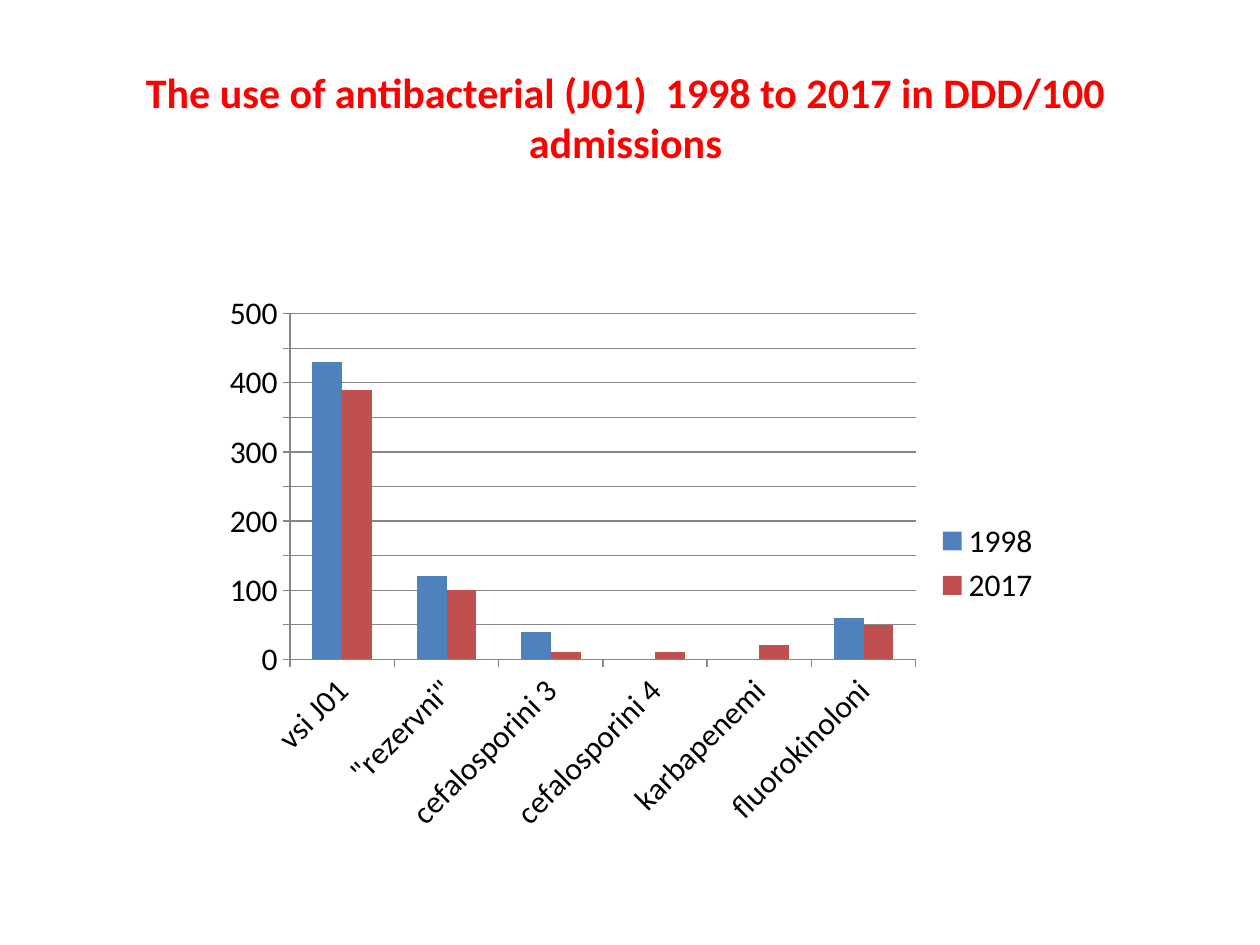
import pptx
import pptx.chart.data
import pptx.dml.color
import pptx.enum.chart
import pptx.enum.text
import pptx.util

Inches = pptx.util.Inches
Pt = pptx.util.Pt
RGBColor = pptx.dml.color.RGBColor

FONT = "Calibri"
RED = RGBColor(0xFF, 0x00, 0x00)
BLACK = RGBColor(0x00, 0x00, 0x00)
GRAY = RGBColor(0x86, 0x86, 0x86)
BLUE = RGBColor(0x4F, 0x81, 0xBD)
BRICK = RGBColor(0xC0, 0x50, 0x4D)

CATEGORIES = ["vsi J01", '"rezervni"', "cefalosporini 3", "cefalosporini 4",
              "karbapenemi", "fluorokinoloni"]
SERIES = [
    ("1998", BLUE, (430, 120, 40, 0, 0, 60)),
    ("2017", BRICK, (390, 100, 10, 10, 20, 50)),
]


def set_font(font, size, color, bold=False):
    """Apply the slide's typeface with a size, colour and weight."""
    font.name = FONT
    font.size = Pt(size)
    font.color.rgb = color
    font.bold = bold


def add_title(s, text):
    """Add the centred red heading."""
    sp = s.shapes.add_textbox(Inches(0.28), Inches(0.3), Inches(9.37), Inches(1.25))
    tf = sp.text_frame
    tf.word_wrap = True
    tf.vertical_anchor = pptx.enum.text.MSO_ANCHOR.MIDDLE
    p = tf.paragraphs[0]
    p.alignment = pptx.enum.text.PP_ALIGN.CENTER
    r = p.add_run()
    r.text = text
    set_font(r.font, 24, RED, bold=True)


def style_line(line):
    """Draw a thin gray chart line."""
    line.color.rgb = GRAY
    line.width = Pt(0.75)


def style_axes(chart):
    """Set outward ticks, the value scale and its gridlines."""
    for axis in (chart.category_axis, chart.value_axis):
        axis.major_tick_mark = pptx.enum.chart.XL_TICK_MARK.OUTSIDE
        axis.minor_tick_mark = pptx.enum.chart.XL_TICK_MARK.NONE
        style_line(axis.format.line)
    values = chart.value_axis
    values.minimum_scale = 0
    values.maximum_scale = 500
    values.major_unit = 50
    values.has_major_gridlines = True
    style_line(values.major_gridlines.format.line)


def add_usage_chart(s):
    """Add the clustered columns comparing both years."""
    data = pptx.chart.data.CategoryChartData()
    data.categories = CATEGORIES
    for name, _, values in SERIES:
        data.add_series(name, values)
    chart = s.shapes.add_chart(
        pptx.enum.chart.XL_CHART_TYPE.COLUMN_CLUSTERED,
        Inches(1.69), Inches(2.25), Inches(6.67), Inches(4.44), data).chart
    chart.has_title = False
    set_font(chart.font, 18, BLACK)
    chart.has_legend = True
    chart.legend.position = pptx.enum.chart.XL_LEGEND_POSITION.RIGHT
    chart.legend.include_in_layout = False
    plot = chart.plots[0]
    plot.gap_width = 150
    plot.overlap = 0
    plot.vary_by_categories = False
    for series, (_, color, _) in zip(plot.series, SERIES):
        series.format.fill.solid()
        series.format.fill.fore_color.rgb = color
        series.invert_if_negative = False
    style_axes(chart)


def main():
    """Build and save the slide."""
    prs = pptx.Presentation()
    prs.slide_width = Inches(10)
    prs.slide_height = Inches(7.5)
    s = prs.slides.add_slide(prs.slide_layouts[6])
    add_title(s, "The use of antibacterial (J01)  1998 to 2017 in DDD/100 admissions")
    add_usage_chart(s)
    prs.save("out.pptx")


if __name__ == "__main__":
    main()
